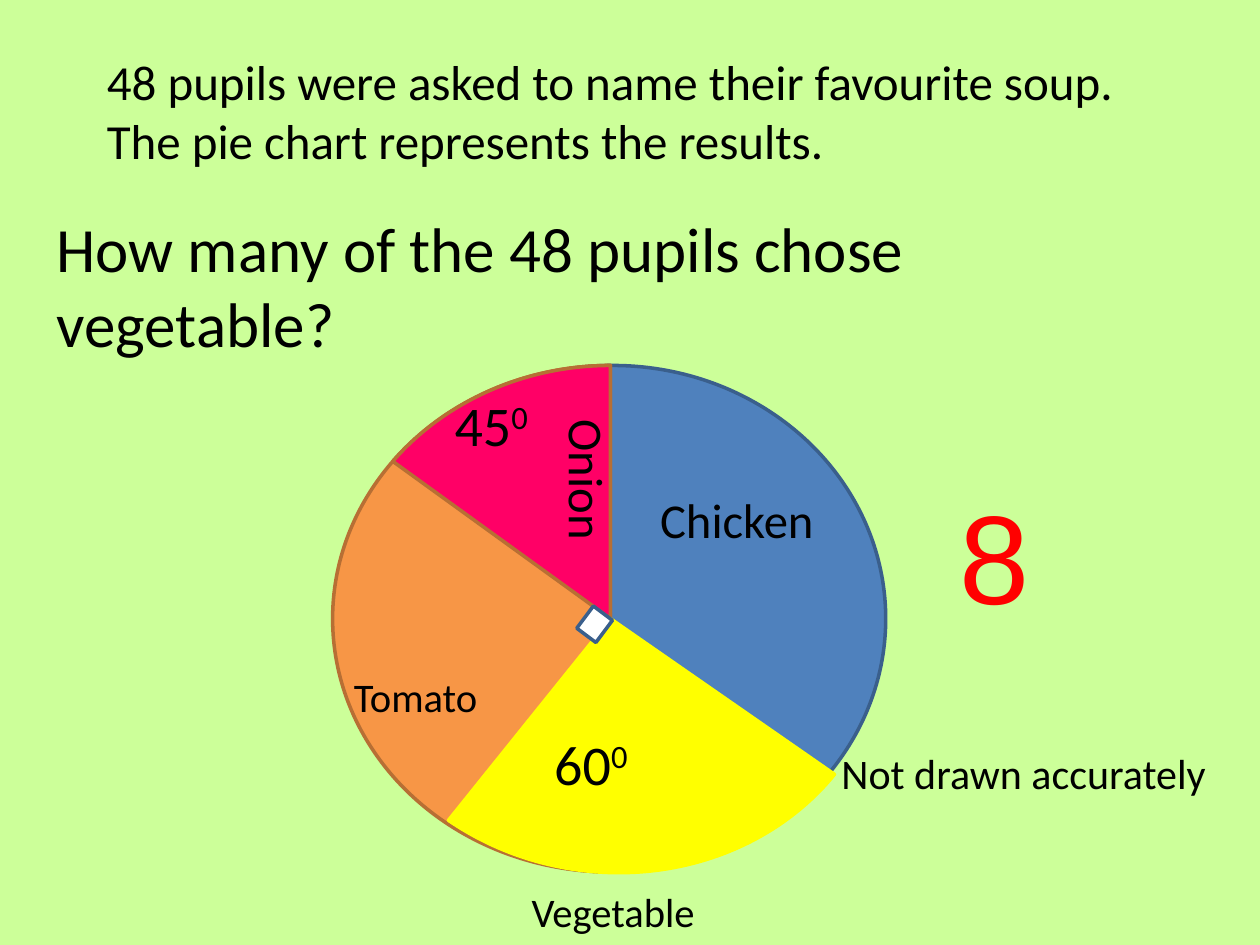
import pptx
import pptx.util
import pptx.dml.color
import pptx.enum.shapes

HUES = {
    "page": "CCFF99", "ink": "000000", "answer": "FF0000", "white": "FFFFFF",
    "blue": "4F81BD", "navy": "3A5F8C", "orange": "F79646", "brown": "B76F34",
    "pink": "FF0066", "yellow": "FFFF00",
}
WIDE, HIGH = 10, 7.5
KINDS = pptx.enum.shapes.MSO_SHAPE
DISC = (26.4, 38.67, 44.1, 53.6)


def hue(name):
    return pptx.dml.color.RGBColor.from_string(HUES[name])


def place(area):
    """Turn percent shares of the slide into lengths."""
    sides = (WIDE, HIGH, WIDE, HIGH)
    return [pptx.util.Inches(share * side / 100)
            for share, side in zip(area, sides)]


def draw(slide, kind, area, fill, line, turn=0):
    shape = slide.shapes.add_shape(kind, *place(area))
    shape.shadow.inherit = False
    shape.fill.solid()
    shape.fill.fore_color.rgb = hue(fill)
    shape.line.color.rgb = hue(line)
    shape.line.width = pptx.util.Pt(2)
    shape.rotation = turn
    return shape


def slice_pie(slide, start, end, fill, line, turn=0):
    """Draw a sector between two angles in degrees, clockwise from the right."""
    shape = draw(slide, KINDS.PIE, DISC, fill, line, turn)
    for i, angle in enumerate((start, end)):
        shape.adjustments[i] = angle * 0.6


def write(slide, area, size, text="", raised="", turn=0,
          face="Calibri", ink="ink"):
    """Write plain text followed by raised text."""
    box = slide.shapes.add_textbox(*place(area))
    box.rotation = turn
    box.text_frame.word_wrap = True
    para = box.text_frame.paragraphs[0]
    style = {"size": pptx.util.Pt(size), "name": face}
    for part, lift in ((text, 0), (raised, 30000)):
        if not part:
            continue
        run = para.add_run()
        run.text = part
        for key, value in style.items():
            setattr(run.font, key, value)
        run.font.color.rgb = hue(ink)
        if lift:
            run.font._element.set("baseline", str(lift))


def main():
    deck = pptx.Presentation()
    deck.slide_width = pptx.util.Inches(WIDE)
    deck.slide_height = pptx.util.Inches(HIGH)
    slide = deck.slides.add_slide(deck.slide_layouts[6])
    slide.background.fill.solid()
    slide.background.fill.fore_color.rgb = hue("page")

    # Pie: chicken disc, then tomato and onion sectors
    draw(slide, KINDS.OVAL, (27, 38.67, 43.3, 53.6), "blue", "navy")
    slice_pie(slide, 37.07, 270, "orange", "brown")
    slice_pie(slide, 215.86, 270, "pink", "brown")

    # Soup names and the onion angle
    write(slide, (27.1, 69.6, 16.1, 10.27), 40, raised="Tomato")
    write(slide, (51.4, 50.13, 16.1, 12.13), 48, raised="Chicken")
    write(slide, (37.7, 47.73, 16.1, 12.13), 48, raised="Onion", turn=90)
    write(slide, (35.1, 40.67, 16.1, 15.73), 32, "45", "0")

    # Vegetable sector with its angle and name
    slice_pie(slide, 205.38, 299.39, "yellow", "yellow", 189.4)
    write(slide, (41.2, 92.27, 17.9, 7.33), 40, raised="Vegetable")
    write(slide, (43, 76.53, 16.1, 15.73), 32, "60", "0")

    # Right-angle mark
    draw(slide, KINDS.RECTANGLE, (46.1, 64.8, 2.2, 2.53),
         "white", "navy", 306.8)

    # Question, note and answer
    write(slide, (7.5, 4.8, 88.2, 13.87), 28,
          "48 pupils were asked to name their favourite soup. "
          "The pie chart represents the results.")
    write(slide, (3.5, 21.47, 72.4, 17.47), 36,
          "How many of the 48 pupils chose vegetable?")
    write(slide, (65.8, 78.4, 32.2, 13.87), 24, "Not drawn accurately")
    write(slide, (75.2, 50, 23.6, 17.47), 72, "8", face="Arial", ink="answer")

    deck.save("out.pptx")


if __name__ == "__main__":
    main()
